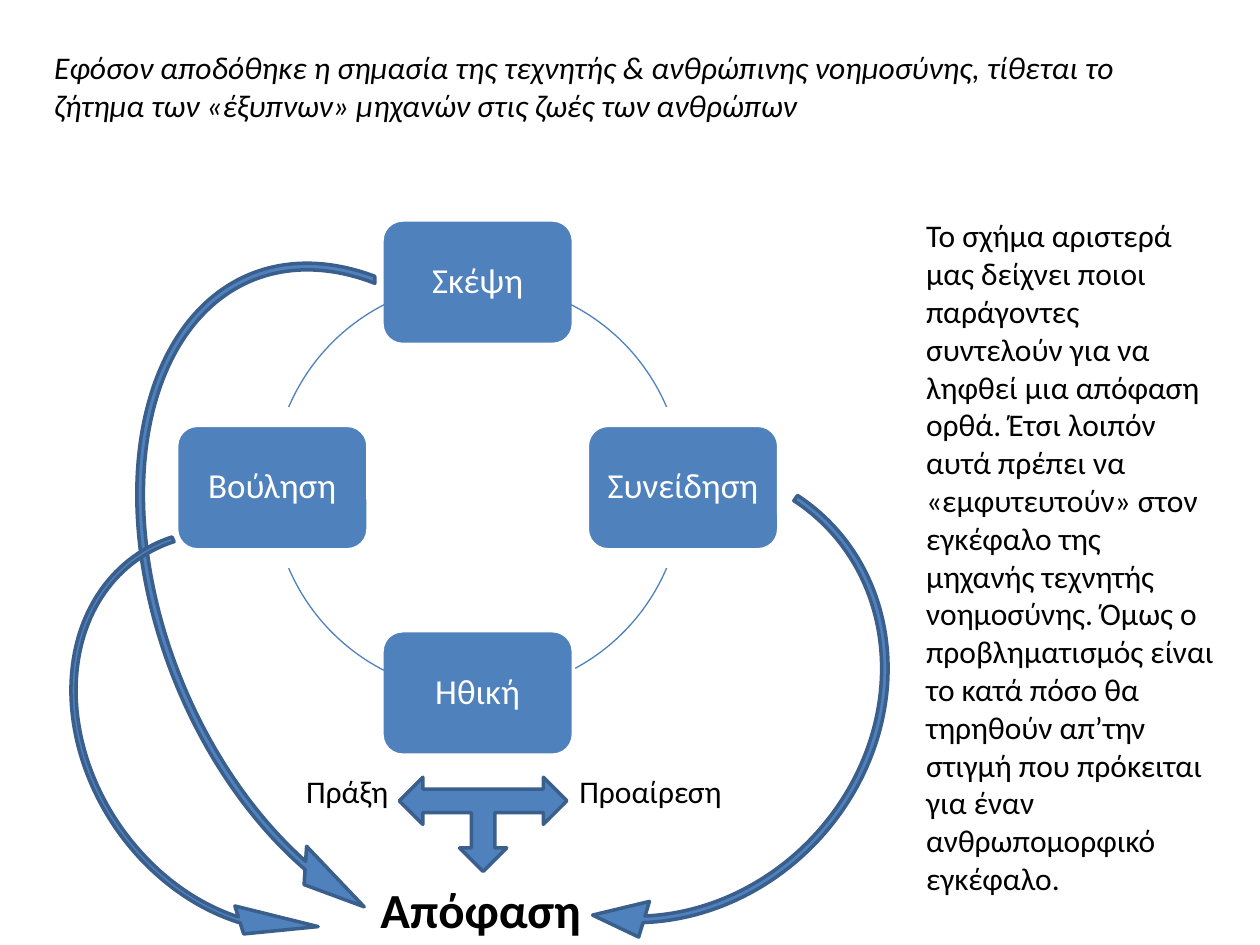
"""Build the slide on the factors behind a right decision."""
import dataclasses
import math

import pptx
import pptx.dml.color
import pptx.enum.shapes
import pptx.enum.text
import pptx.util

Cm = pptx.util.Cm
Pt = pptx.util.Pt
RGB = pptx.dml.color.RGBColor.from_string
Shape = pptx.enum.shapes.MSO_SHAPE
Align = pptx.enum.text.PP_ALIGN
Anchor = pptx.enum.text.MSO_ANCHOR


@dataclasses.dataclass(frozen=True)
class Theme:
    font: str = "Calibri"
    ink: str = "000000"
    white: str = "FFFFFF"
    blue: str = "4F81BD"
    dark_blue: str = "3A5F8C"
    body: int = 18
    node: int = 20
    result: int = 28
    outline: float = 2
    thin: float = 0.75


class Painter:
    def __init__(self, slide, theme):
        self.slide = slide
        self.theme = theme

    def add_span(self, para, text, size, color, bold=False, italic=False):
        span = para.add_run()
        span.text = text
        span.font.name = self.theme.font
        span.font.size = Pt(size)
        span.font.bold = bold
        span.font.italic = italic
        span.font.color.rgb = RGB(color)

    def shape(self, kind, place, fill, line, width):
        shape = self.slide.shapes.add_shape(kind, *map(Cm, place))
        shape.shadow.inherit = False
        if fill:
            shape.fill.solid()
            shape.fill.fore_color.rgb = RGB(fill)
        else:
            shape.fill.background()
        shape.line.color.rgb = RGB(line)
        shape.line.width = Pt(width)
        return shape

    def text(self, place, paragraphs, size=None, bold=False, italic=False):
        frame = self.slide.shapes.add_textbox(*map(Cm, place)).text_frame
        frame.word_wrap = True
        frame.auto_size = pptx.enum.text.MSO_AUTO_SIZE.SHAPE_TO_FIT_TEXT
        for index, text in enumerate(paragraphs):
            para = frame.add_paragraph() if index else frame.paragraphs[0]
            self.add_span(para, text, size or self.theme.body, self.theme.ink, bold, italic)

    def node(self, place, text):
        theme = self.theme
        box = self.shape(Shape.ROUNDED_RECTANGLE, place, theme.blue, theme.white, theme.outline)
        frame = box.text_frame
        frame.word_wrap = True
        frame.vertical_anchor = Anchor.MIDDLE
        frame.margin_left = frame.margin_right = Cm(0.2)
        frame.margin_top = frame.margin_bottom = Cm(0.2)
        para = frame.paragraphs[0]
        para.alignment = Align.CENTER
        para.line_spacing = 0.9
        self.add_span(para, text, theme.node, theme.white)

    def arc(self, place, start, end):
        arc = self.shape(Shape.ARC, place, None, self.theme.blue, self.theme.thin)
        for index, degrees in enumerate((start, end)):
            arc.adjustments[index] = degrees * 0.6

    def arrow(self, kind, place, rotation=0, adjustments=(), flip=None):
        theme = self.theme
        arrow = self.shape(kind, place, theme.blue, theme.dark_blue, theme.outline)
        for index, value in enumerate(adjustments):
            arrow.adjustments[index] = value
        arrow.rotation = rotation
        if flip:
            arrow.element.spPr.xfrm.set(flip, "1")

    def curved_arrow(self, place, rotation, head, start, flip=None):
        adjustments = (1.4 / 100, head, 30.54, start, 0.04)
        self.arrow(Shape.CIRCULAR_ARROW, place, rotation, adjustments, flip)


def draw_cycle(painter, names):
    center_x, center_y, radius = 9.63, 9.83, 4.14
    width, height = 3.86, 2.51
    circle = (center_x - radius, center_y - radius, 2 * radius, 2 * radius)
    for index, name in enumerate(names):
        angle = math.radians(90 * index - 90)
        x = center_x + radius * math.cos(angle)
        y = center_y + radius * math.sin(angle)
        painter.node((x - width / 2, y - height / 2, width, height), name)
        middle = (90 * index - 45) % 360
        painter.arc(circle, middle - 21.9, middle + 21.9)


def main():
    deck = pptx.Presentation()
    deck.slide_width, deck.slide_height = Cm(25.4), Cm(19.05)
    theme = Theme()
    painter = Painter(deck.slides.add_slide(deck.slide_layouts[6]), theme)

    painter.text((0.84, 0.84, 22.86, 1.8), [
        "Εφόσον αποδόθηκε η σημασία της τεχνητής & ανθρώπινης νοημοσύνης, "
        "τίθεται το ζήτημα των «έξυπνων» μηχανών στις ζωές των ανθρώπων",
    ], italic=True)
    draw_cycle(painter, ["Σκέψη", "Συνείδηση", "Ηθική", "Βούληση"])

    painter.arrow(Shape.LEFT_RIGHT_UP_ARROW, (8.05, 15.67, 3.38, 1.9), flip="flipV")
    painter.text((5.92, 15.44, 2.34, 1.02), ["Πράξη"])
    painter.text((11.43, 15.44, 3.61, 1.02), ["Προαίρεση"])
    painter.text((7.42, 17.6, 4.65, 1.45), ["Απόφαση"], theme.result, bold=True)

    painter.curved_arrow((8.61, 8.79, 9.37, 10.34), 43, 7.7, 157.21)
    painter.curved_arrow((2.9, 4.67, 9.7, 14.86), 337.5, 7.7, 149.53, "flipH")
    painter.curved_arrow((1.47, 10.19, 7.39, 9.07), 326, 13.57, 155.71, "flipH")

    painter.text((18.42, 4.24, 6.35, 14.1), [
        "Το σχήμα αριστερά",
        "μας δείχνει ποιοι παράγοντες συντελούν για να ληφθεί μια απόφαση ορθά. "
        "Έτσι λοιπόν αυτά πρέπει να «εμφυτευτούν» στον εγκέφαλο της μηχανής "
        "τεχνητής νοημοσύνης. Όμως ο προβληματισμός είναι το κατά πόσο θα "
        "τηρηθούν απ’την στιγμή που πρόκειται για έναν ανθρωπομορφικό εγκέφαλο.",
    ])
    deck.save("out.pptx")


if __name__ == "__main__":
    main()
